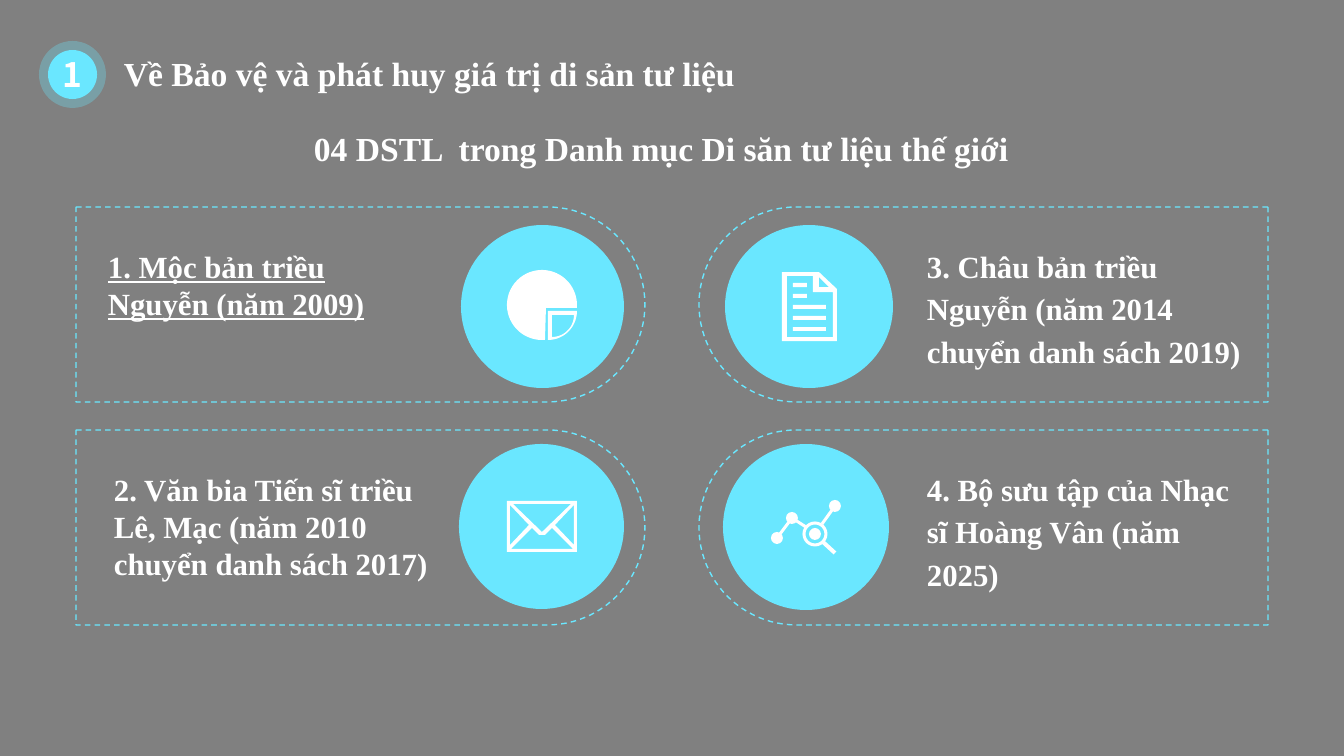
import math

from pptx import Presentation
from pptx import util as u
from pptx.dml.color import RGBColor
from pptx.enum import dml, shapes, text
from pptx.oxml import ns, xmlchemy

GREY = RGBColor(0x80, 0x80, 0x80)
CYAN = RGBColor(0x6A, 0xE7, 0xFF)
WHITE = RGBColor(0xFF, 0xFF, 0xFF)
WIDTH, HEIGHT = 1344, 756
SCALE = u.Inches(1) / 100.8
PANEL_WIDTH, PANEL_HEIGHT = 569, 195
PANEL_TOPS = (207, 430)


def px(length):
    return u.Emu(round(length * SCALE))


def arc(x, y, radius, start, end, steps=48):
    angles = [math.radians(start + (end - start) * i / steps) for i in range(steps + 1)]
    return [(x + radius * math.cos(a), y + radius * math.sin(a)) for a in angles]


def rectangle(left, top, right, bottom):
    return [(left, top), (right, top), (right, bottom), (left, bottom)]


class Slide:
    font = "Times New Roman"
    number_font = "Noto Sans CJK SC"

    def __init__(self, deck):
        self.page = deck.slides.add_slide(deck.slide_layouts[6])
        self.page.background.fill.solid()
        self.page.background.fill.fore_color.rgb = GREY

    def paint(self, shape, color):
        shape.shadow.inherit = False
        shape.fill.solid()
        shape.fill.fore_color.rgb = color
        shape.line.fill.background()

    def span(self, para, words, size, font, underline=None):
        span = para.add_run()
        span.text = words
        span.font.name = font
        span.font.size = u.Pt(size)
        span.font.bold = True
        span.font.underline = underline
        span.font.color.rgb = WHITE

    def label(self, words, left, top, width, height, size=22, align=None,
              spacing=None, underline=None):
        box = self.page.shapes.add_textbox(px(left), px(top), px(width), px(height))
        box.text_frame.word_wrap = True
        box.text_frame.auto_size = text.MSO_AUTO_SIZE.SHAPE_TO_FIT_TEXT
        para = box.text_frame.paragraphs[0]
        para.alignment = align
        para.line_spacing = spacing
        self.span(para, words, size, self.font, underline)

    def ellipse(self, left, top, width, height, color=CYAN, opacity=None):
        shape = self.page.shapes.add_shape(
            shapes.MSO_SHAPE.OVAL, px(left), px(top), px(width), px(height))
        self.paint(shape, color)
        if opacity:
            alpha = xmlchemy.OxmlElement("a:alpha")
            alpha.set("val", str(opacity * 1000))
            shape.element.spPr.find(".//" + ns.qn("a:srgbClr")).append(alpha)
        return shape

    def dot(self, x, y, radius):
        return self.ellipse(x - radius, y - radius, 2 * radius, 2 * radius, WHITE)

    def ring(self, x, y, radius, width):
        shape = self.dot(x, y, radius)
        shape.fill.background()
        shape.line.color.rgb = WHITE
        shape.line.width = px(width)

    def line(self, start, end, width):
        line = self.page.shapes.add_connector(
            shapes.MSO_CONNECTOR.STRAIGHT, *map(px, start + end))
        line.line.color.rgb = WHITE
        line.line.width = px(width)
        line.element.spPr.append(xmlchemy.OxmlElement("a:effectLst"))

    def outline(self, *contours):
        rings = [[(px(x), px(y)) for x, y in contour] for contour in contours]
        builder = self.page.shapes.build_freeform(*rings[0][0])
        for index, points in enumerate(rings):
            if index:
                builder.move_to(*points[0])
            builder.add_line_segments(points[1:], close=True)
        shape = builder.convert_to_shape()
        self.paint(shape, WHITE)
        return shape

    def panel(self, flat, tip, top):
        radius = PANEL_HEIGHT / 2
        side = 1 if tip > flat else -1
        curve = arc(0, top + radius, radius, -90, 90)
        points = [(tip - side * (radius - x), y) for x, y in curve]
        shape = self.outline([(flat, top)] + points + [(flat, top + PANEL_HEIGHT)])
        shape.fill.background()
        shape.line.color.rgb = CYAN
        shape.line.width = u.Pt(1)
        shape.line.dash_style = dml.MSO_LINE.DASH

    def badge(self, number):
        self.ellipse(39, 41, 67, 67, opacity=30)
        frame = self.ellipse(48, 50, 49, 49).text_frame
        frame.margin_left = frame.margin_right = 0
        frame.margin_top = frame.margin_bottom = 0
        frame.vertical_anchor = text.MSO_ANCHOR.MIDDLE
        frame.paragraphs[0].alignment = text.PP_ALIGN.CENTER
        self.span(frame.paragraphs[0], number, 24, self.number_font)

    def pie_icon(self):
        self.outline(
            [(546, 308)] + arc(542, 305, 35, 85, 365),
            [(548, 311)] + arc(548, 311, 29, 0, 90),
            [(552, 315)] + arc(552, 315, 22, 0, 90))

    def document_icon(self):
        bars = [rectangle(793, y, 807 if y < 300 else 826, y + 4)
                for y in range(283, 328, 11)]
        self.outline(
            [(782, 272), (819, 272), (837, 289), (837, 341), (782, 341)],
            [(787, 276), (787, 337), (833, 337), (833, 292), (813, 292), (813, 276)],
            [(819, 277), (819, 287), (829, 287)],
            *bars)

    def envelope_icon(self):
        self.outline(
            rectangle(507, 501, 577, 552),
            [(513, 504), (542, 532), (571, 504)],
            [(510, 505), (510, 545), (529, 525)],
            [(574, 505), (574, 545), (555, 525)],
            [(532, 528), (539, 535), (545, 535), (552, 528), (573, 549), (511, 549)])

    def network_icon(self):
        nodes = [(777, 538), (792, 518), (835, 506)]
        for x, y in nodes:
            self.dot(x, y, 6)
        self.line(nodes[0], nodes[1], 3)
        self.line(nodes[1], (806, 527), 3)
        self.line((822, 524), nodes[2], 3)
        self.line((823, 542), (835, 553), 4)
        self.ring(815, 534, 11, 3)
        self.dot(815, 534, 6)


def main():
    deck = Presentation()
    deck.slide_width, deck.slide_height = px(WIDTH), px(HEIGHT)
    slide = Slide(deck)
    justify = text.PP_ALIGN.JUSTIFY

    slide.badge("1")
    slide.label("Về Bảo vệ và phát huy giá trị di sản tư liệu",
                114, 48, 736, 50, 24, justify)
    slide.label("04 DSTL  trong Danh mục Di săn tư liệu thế giới",
                304, 123, 736, 50, 24, justify)

    for top in PANEL_TOPS:
        slide.panel(76, 76 + PANEL_WIDTH, top)
        slide.panel(1268, 1268 - PANEL_WIDTH, top)

    for disc in ((461, 225, 163, 163), (725, 225, 168, 163),
                 (459, 444, 165, 165), (723, 444, 166, 166)):
        slide.ellipse(*disc)
    slide.pie_icon()
    slide.document_icon()
    slide.envelope_icon()
    slide.network_icon()

    slide.label("1. Mộc bản triều Nguyễn (năm 2009)", 98, 243, 343, 85, underline=True)
    slide.label("2. Văn bia Tiến sĩ triều Lê, Mạc (năm 2010 chuyển danh sách 2017)",
                104, 466, 343, 122)
    slide.label("3. Châu bản triều Nguyễn (năm 2014 chuyển danh sách 2019)",
                917, 237, 343, 135, spacing=1.15)
    slide.label("4. Bộ sưu tập của Nhạc sĩ Hoàng Vân (năm 2025)",
                917, 460, 343, 135, spacing=1.15)
    deck.save("out.pptx")


if __name__ == "__main__":
    main()
